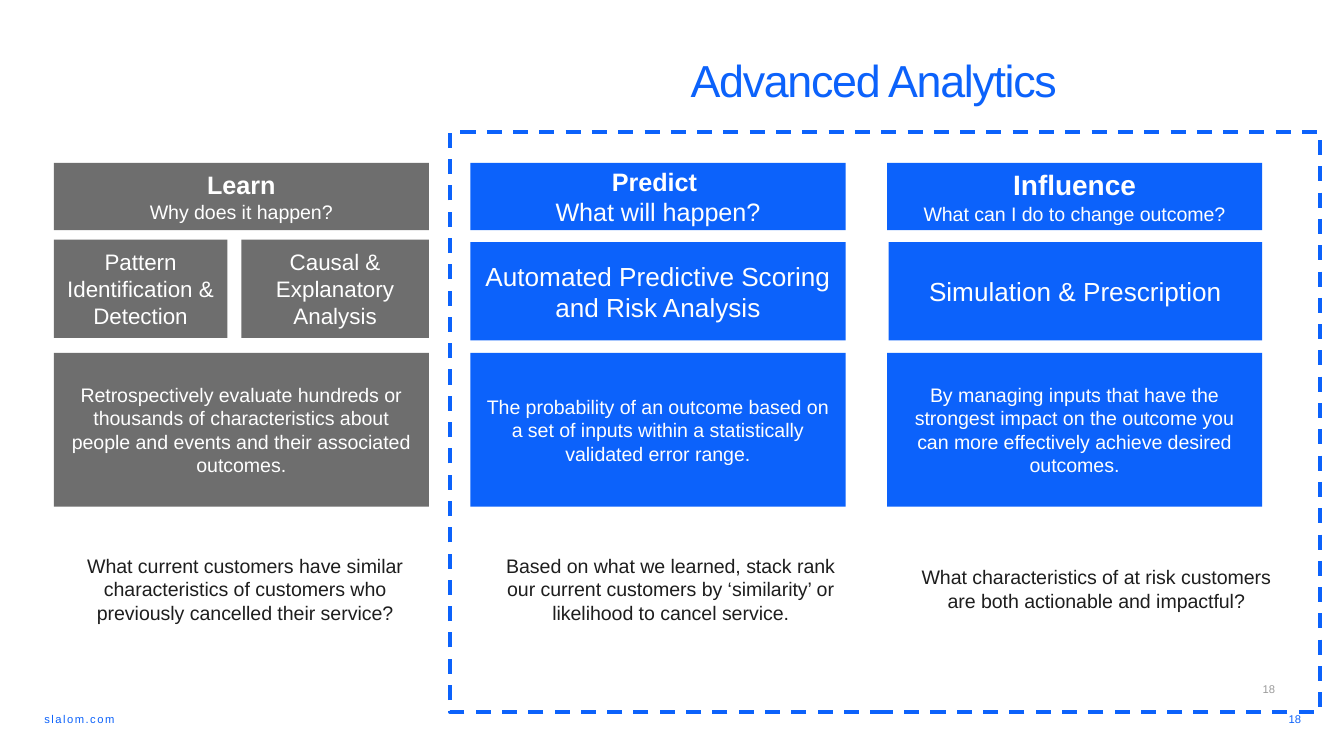
from pptx import Presentation
from pptx.dml.color import RGBColor
from pptx.enum.dml import MSO_LINE
from pptx.enum.shapes import MSO_SHAPE
from pptx.enum.text import MSO_ANCHOR, MSO_AUTO_SIZE, PP_ALIGN
from pptx.util import Pt

BLUE, GRAY, WHITE, INK, PALE = "0C62FB", "6E6E6E", "FFFFFF", "1E1E1E", "9B9B9B"
LEFT, MID, RIGHT = PP_ALIGN.LEFT, PP_ALIGN.CENTER, PP_ALIGN.RIGHT


def rgb(code):
    return RGBColor.from_string(code)


def write(shape, lines, color, align=MID, anchor=MSO_ANCHOR.MIDDLE, inset=None, track=0):
    """Fill a shape with one paragraph per (text, size, bold) line; track is in points."""
    frame = shape.text_frame
    frame.word_wrap = True
    frame.auto_size = MSO_AUTO_SIZE.NONE
    frame.vertical_anchor = anchor
    if inset is not None:
        frame.margin_left = frame.margin_right = Pt(inset)
        frame.margin_top = frame.margin_bottom = Pt(inset)
    for i, (text, size, bold) in enumerate(lines):
        para = frame.paragraphs[0] if i == 0 else frame.add_paragraph()
        para.alignment = align
        run = para.add_run()
        run.text = text
        run.font.name = "Arial"
        run.font.size = Pt(size)
        run.font.bold = bold
        run.font.color.rgb = rgb(color)
        if track:
            run._r.get_or_add_rPr().set("spc", str(round(track * 100)))


deck = Presentation()
deck.slide_width, deck.slide_height = Pt(720), Pt(405)
slide = deck.slides.add_slide(deck.slide_layouts[5])
shapes = slide.shapes

# Title
title = shapes.title
title.left, title.top, title.width, title.height = Pt(270), Pt(28.5), Pt(402), Pt(27)
write(title, [("Advanced Analytics ", 24, False)], BLUE,
      anchor=MSO_ANCHOR.TOP, inset=0, track=-0.7)

# Footer: text, box, colour, alignment, anchor, tracking
notes = [
    ("18 ", (640.8, 359.3, 43.9, 13.7), PALE, RIGHT, MSO_ANCHOR.BOTTOM, 0),
    ("slalom.com", (23.8, 378, 45.4, 10.8), BLUE, LEFT, MSO_ANCHOR.BOTTOM, 0.8),
    ("18", (671.8, 381.6, 25.2, 15.8), BLUE, RIGHT, MSO_ANCHOR.TOP, 0),
]
for text, box, color, align, anchor, track in notes:
    note = shapes.add_textbox(*map(Pt, box))
    write(note, [(text, 6, False)], color, align, anchor, 0, track)

# Columns: colour, heading lines, method boxes (offset, width, text, size),
# method top, detail, question
columns = [
    (GRAY, [("Learn", 13.5, True), ("Why does it happen?", 10.5, False)],
     [(0, 93, "Pattern Identification & Detection", 12),
      (100.5, 100.5, "Causal & Explanatory Analysis", 12)], 128.4,
     "Retrospectively evaluate hundreds or thousands of characteristics about "
     "people and events and their associated outcomes.",
     "What current customers have similar characteristics of customers who "
     "previously cancelled their service?"),
    (BLUE, [("Predict ", 13.5, True), ("What will happen?", 13.5, False)],
     [(0, 201, "Automated Predictive Scoring and Risk Analysis", 14)], 129.8,
     "The probability of an outcome based on a set of inputs within a "
     "statistically validated error range.",
     "Based on what we learned, stack rank our current customers by "
     "‘similarity’ or likelihood to cancel service."),
    (BLUE, [("Influence", 15, True), ("What can I do to change outcome?", 10.5, False)],
     [(0.8, 200.2, "Simulation & Prescription", 14)], 129.8,
     "By managing inputs that have the strongest impact on the outcome you can "
     "more effectively achieve desired outcomes.",
     "What characteristics of at risk customers are both actionable and impactful?"),
]
for i, (color, head, methods, top, detail, ask) in enumerate(columns):
    x = 28.8 + 223.2 * i
    boxes = [(x, 87.3, 201, 36, head), (x, 189, 201, 82.5, [(detail, 10.5, False)])]
    for shift, width, text, size in methods:
        boxes.append((x + shift, top, width, 52.6, [(text, size, False)]))
    for left, y, width, height, lines in boxes:
        box = shapes.add_shape(MSO_SHAPE.RECTANGLE, Pt(left), Pt(y), Pt(width), Pt(height))
        box.shadow.inherit = False
        box.fill.solid()
        box.fill.fore_color.rgb = rgb(color)
        box.line.fill.background()
        write(box, lines, WHITE)
    label = shapes.add_textbox(Pt(28.8 + 228 * i), Pt(289.5), Pt(205.2), Pt(52))
    write(label, [(ask, 10.5, False)], INK)

# Dashed frame around the advanced columns
frame = shapes.add_shape(MSO_SHAPE.RECTANGLE, Pt(241.2), Pt(70.6), Pt(466), Pt(311))
frame.shadow.inherit = False
frame.fill.background()
frame.line.color.rgb = rgb(BLUE)
frame.line.width = Pt(2)
frame.line.dash_style = MSO_LINE.DASH

deck.save("out.pptx")
